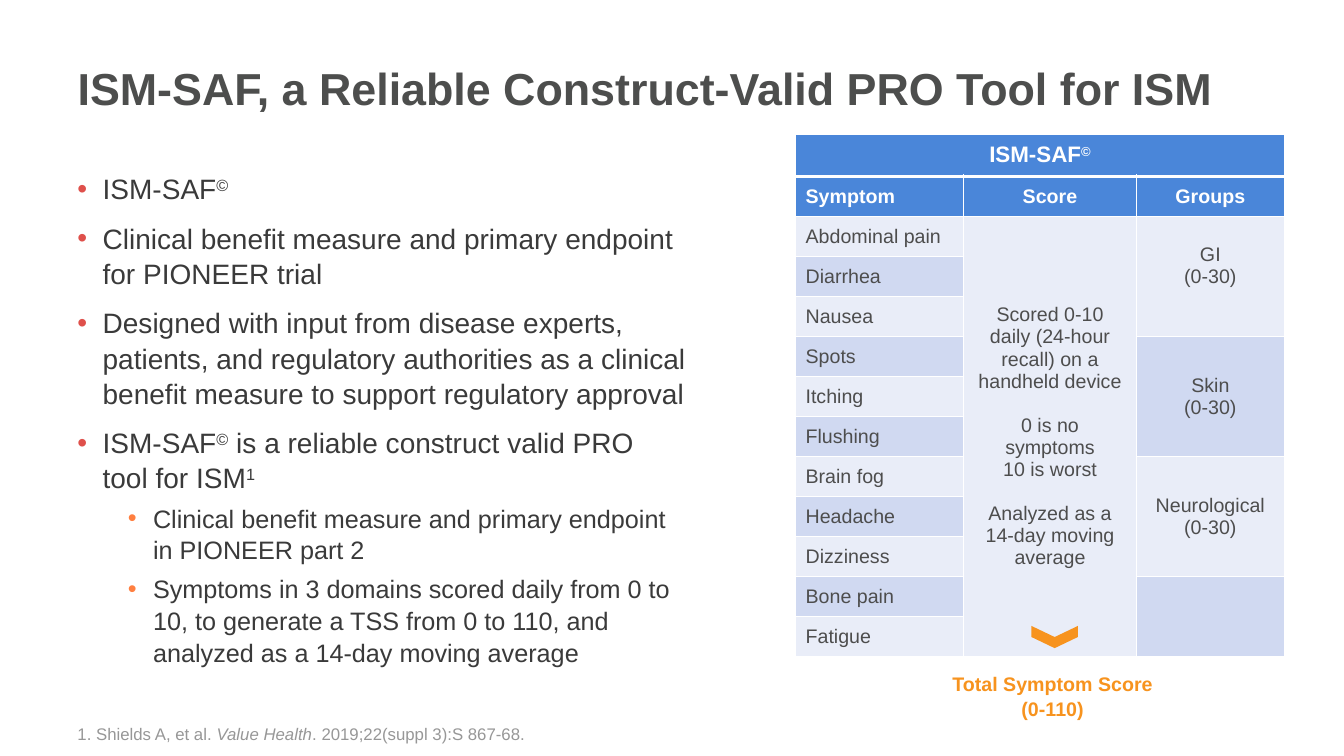
from lxml.etree import SubElement
from pptx import Presentation
from pptx.dml.color import RGBColor
from pptx.enum.shapes import MSO_SHAPE
from pptx.enum.text import MSO_ANCHOR, MSO_AUTO_SIZE, PP_ALIGN
from pptx.oxml.ns import qn
from pptx.util import Inches, Pt

FONT = "Arial"
WHITE = RGBColor(0xFF, 0xFF, 0xFF)
TITLE_GRAY = RGBColor(0x4D, 0x4E, 0x4D)
BODY_GRAY = RGBColor(0x3A, 0x3A, 0x3A)
CELL_GRAY = RGBColor(0x4D, 0x4D, 0x4D)
NOTE_GRAY = RGBColor(0x97, 0x97, 0x97)
RED = RGBColor(0xDF, 0x50, 0x4B)
CORAL = RGBColor(0xFF, 0x7F, 0x40)
ORANGE = RGBColor(0xF7, 0x93, 0x1E)
BLUE = RGBColor(0x4A, 0x86, 0xD9)
BANDS = [RGBColor(0xE9, 0xED, 0xF8), RGBColor(0xD0, 0xD9, 0xF1)]

BULLETS = [
    (0, [("ISM-SAF", ""), ("©", "super")]),
    (0, [("Clinical benefit measure and primary endpoint for PIONEER trial", "")]),
    (0, [("Designed with input from disease experts, patients, and regulatory "
          "authorities as a clinical benefit measure to support regulatory approval", "")]),
    (0, [("ISM-SAF", ""), ("©", "super"), (" is a reliable construct valid PRO", ""),
         ("", "break"), ("tool for ISM", ""), ("1", "super")]),
    (1, [("Clinical benefit measure and primary endpoint in PIONEER part 2", "")]),
    (1, [("Symptoms in 3 domains scored daily from 0 to 10, to generate a TSS "
          "from 0 to 110, and analyzed as a 14-day moving average", "")]),
]
LEVELS = [(20, 10, 0.25, RED), (18, 5, 0.75, CORAL)]
SYMPTOMS = ["Abdominal pain", "Diarrhea", "Nausea", "Spots", "Itching", "Flushing",
            "Brain fog", "Headache", "Dizziness", "Bone pain", "Fatigue"]
SCORE_BLOCKS = [
    ["Scored 0-10", "daily (24-hour recall) on a handheld device"],
    ["0 is no symptoms", "10 is worst"],
    ["Analyzed as a 14-day moving average"],
]
GROUPS = [("GI", 3), ("Skin", 3), ("Neurological", 3), ("", 2)]
COLUMN_WIDTHS = [1.67, 1.71, 1.47]


def add_spans(para, spans, size, color, bold=False):
    for text, style in spans:
        if style == "break":
            para.add_line_break()
            continue
        span = para.add_run()
        span.text = text
        font = span.font
        font.name, font.size, font.bold = FONT, Pt(size), bold
        font.color.rgb = color
        if style == "italic":
            font.italic = True
        if style == "super":
            span._r.get_or_add_rPr().set("baseline", "30000")


def next_para(frame, index):
    return frame.paragraphs[0] if index == 0 else frame.add_paragraph()


def add_text_box(page, left, top, width, height):
    box = page.shapes.add_textbox(Inches(left), Inches(top), Inches(width), Inches(height))
    box.text_frame.word_wrap = True
    return box.text_frame


def add_bullet(para, indent, color):
    properties = para._p.get_or_add_pPr()
    properties.set("marL", str(Inches(indent)))
    properties.set("indent", str(Inches(-0.25)))
    SubElement(SubElement(properties, qn("a:buClr")), qn("a:srgbClr"), val=str(color))
    SubElement(properties, qn("a:buFont"), typeface=FONT)
    SubElement(properties, qn("a:buChar"), char="•")


def add_title(page):
    title = page.shapes.title
    title.left, title.top = Inches(0.67), Inches(0.22)
    title.width, title.height = Inches(11.75), Inches(1.3)
    frame = title.text_frame
    frame.auto_size = MSO_AUTO_SIZE.NONE
    frame.vertical_anchor = MSO_ANCHOR.MIDDLE
    para = frame.paragraphs[0]
    para.alignment = PP_ALIGN.LEFT
    add_spans(para, [("ISM-SAF, a Reliable Construct-Valid PRO Tool for ISM", "")],
              32, TITLE_GRAY, True)


def add_bullets(page):
    frame = add_text_box(page, 0.67, 1.64, 6.26, 5.12)
    for index, (level, spans) in enumerate(BULLETS):
        size, gap, indent, color = LEVELS[level]
        para = next_para(frame, index)
        add_bullet(para, indent, color)
        para.level = level
        para.line_spacing = 1.05
        if index:
            para.space_before = Pt(gap)
        add_spans(para, spans, size, BODY_GRAY)


def add_footnote(page):
    frame = add_text_box(page, 0.67, 6.95, 11.5, 0.48)
    frame.vertical_anchor = MSO_ANCHOR.BOTTOM
    add_spans(frame.paragraphs[0], [("1. Shields A, et al. ", ""), ("Value Health", "italic"),
                                    (". 2019;22(suppl 3):S 867-68.", "")], 12, NOTE_GRAY)


def style_cell(cell, fill, top=1, bottom=1):
    properties = cell._tc.get_or_add_tcPr()
    for side, width in (("L", 1), ("R", 1), ("T", top), ("B", bottom)):
        line = SubElement(properties, qn(f"a:ln{side}"), w=str(Pt(width)))
        SubElement(SubElement(line, qn("a:solidFill")), qn("a:srgbClr"), val=str(WHITE))
    cell.fill.solid()
    cell.fill.fore_color.rgb = fill
    cell.vertical_anchor = MSO_ANCHOR.MIDDLE


def write_cell(cell, blocks, color, align=PP_ALIGN.CENTER, size=14, bold=False):
    index = 0
    for block in blocks:
        for position, spans in enumerate(block):
            para = next_para(cell.text_frame, index)
            para.alignment = align
            if index and position == 0:
                para.space_before = Pt(16)
            add_spans(para, spans, size, color, bold)
            index += 1


def plain(*lines):
    return [[(line, "")] for line in lines]


def add_symptom_table(page):
    row_count = len(SYMPTOMS) + 2
    table = page.shapes.add_table(row_count, 3, Inches(7.89), Inches(1.33),
                                  Inches(4.85), Inches(5.19)).table
    table.horz_banding = False
    for column, width in zip(table.columns, COLUMN_WIDTHS):
        column.width = Inches(width)
    for index, row in enumerate(table.rows):
        row.height = Inches(0.42) if index == 0 else Inches(4.77) // (row_count - 1)

    for column, heading in enumerate(["Symptom", "Score", "Groups"]):
        style_cell(table.cell(0, column), BLUE, bottom=3)
        style_cell(table.cell(1, column), BLUE, top=3)
        align = PP_ALIGN.CENTER if column else PP_ALIGN.LEFT
        write_cell(table.cell(1, column), [plain(heading)], WHITE, align, bold=True)
    table.cell(0, 0).merge(table.cell(0, 2))
    write_cell(table.cell(0, 0), [[[("ISM-SAF", ""), ("©", "super")]]], WHITE, size=16, bold=True)

    for index, symptom in enumerate(SYMPTOMS):
        style_cell(table.cell(index + 2, 0), BANDS[index % 2])
        style_cell(table.cell(index + 2, 1), BANDS[0])
        write_cell(table.cell(index + 2, 0), [plain(symptom)], CELL_GRAY, PP_ALIGN.LEFT)
    table.cell(2, 1).merge(table.cell(row_count - 1, 1))
    write_cell(table.cell(2, 1), [plain(*block) for block in SCORE_BLOCKS], CELL_GRAY)

    first = 2
    for index, (group, height) in enumerate(GROUPS):
        for row in range(first, first + height):
            style_cell(table.cell(row, 2), BANDS[index % 2])
        table.cell(first, 2).merge(table.cell(first + height - 1, 2))
        if group:
            write_cell(table.cell(first, 2), [plain(group, "(0-30)")], CELL_GRAY)
        first += height
    table.cell(2, 2).margin_bottom = Inches(0.27)


def add_total_score(page):
    para = add_text_box(page, 8.88, 6.61, 3.12, 0.57).paragraphs[0]
    para.alignment = PP_ALIGN.CENTER
    para.line_spacing = 1.05
    add_spans(para, [("Total Symptom Score", ""), ("", "break"), ("(0-110)", "")],
              14, ORANGE, True)
    chevron = page.shapes.add_shape(MSO_SHAPE.CHEVRON, Inches(10.35), Inches(6.09),
                                    Inches(0.22), Inches(0.46))
    chevron.rotation = 90
    chevron.shadow.inherit = False
    chevron.fill.solid()
    chevron.fill.fore_color.rgb = ORANGE
    chevron.line.fill.background()


def main():
    deck = Presentation()
    deck.slide_width, deck.slide_height = Inches(13.33), Inches(7.5)
    page = deck.slides.add_slide(deck.slide_layouts[5])
    add_title(page)
    add_bullets(page)
    add_footnote(page)
    add_symptom_table(page)
    add_total_score(page)
    deck.save("out.pptx")


if __name__ == "__main__":
    main()
